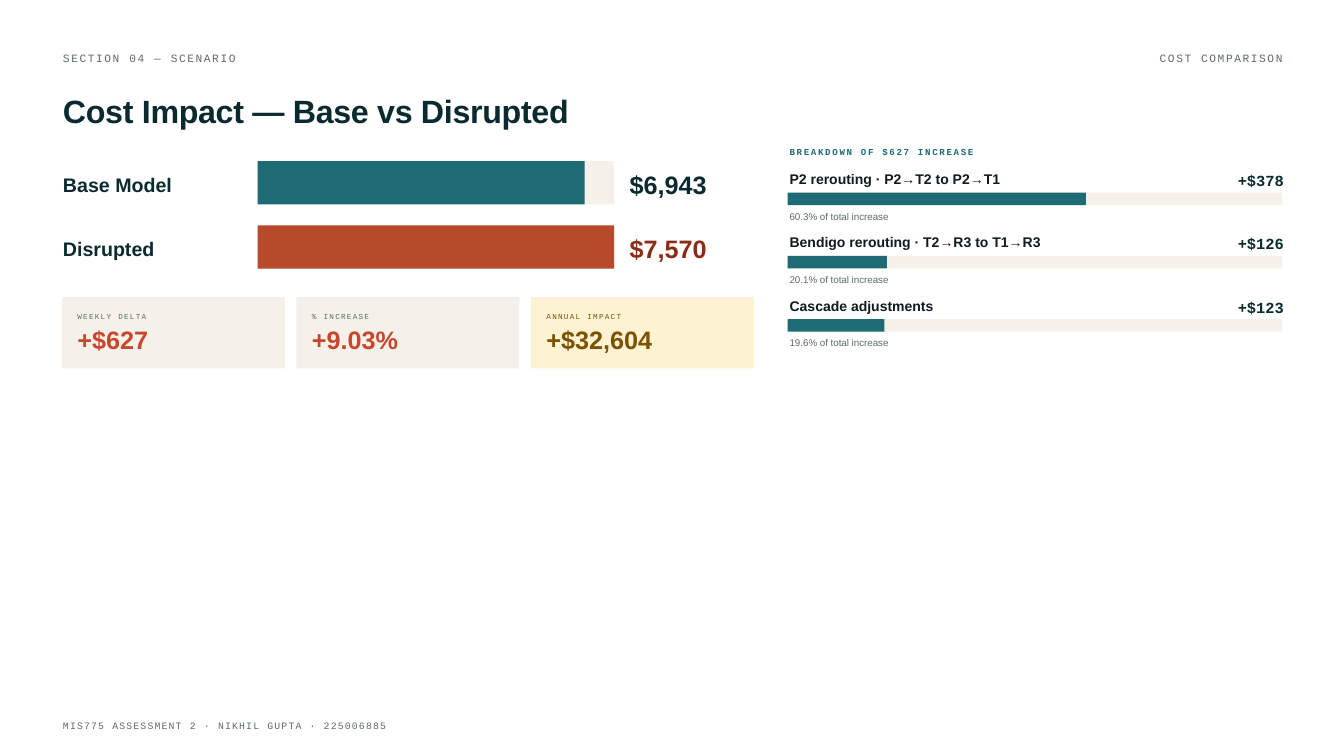
from pptx import Presentation
from pptx.dml.color import RGBColor
from pptx.enum import shapes, text
from pptx.util import Pt

INK = RGBColor(0x0B, 0x2A, 0x30)
BODY = RGBColor(0x0E, 0x1B, 0x1F)
GREY = RGBColor(0x5B, 0x6B, 0x6F)
TEAL = RGBColor(0x1F, 0x6B, 0x75)
RUST = RGBColor(0xB8, 0x4A, 0x2C)
DARK_RUST = RGBColor(0x8E, 0x2B, 0x16)
RED = RGBColor(0xC8, 0x46, 0x2C)
BROWN = RGBColor(0x7A, 0x52, 0x00)
SAND = RGBColor(0xF5, 0xF1, 0xEA)
CREAM = RGBColor(0xFD, 0xF3, 0xD3)
WHITE = RGBColor(0xFF, 0xFF, 0xFF)
SANS, MONO = "Arial", "Courier New"
MARGIN = 67.5


def add_text(slide, content, left, top, width, *, size, leading, color,
             font=SANS, bold=False, tracking=0):
    """Place one line of text; leading and tracking are in points."""
    box = slide.shapes.add_textbox(Pt(left), Pt(top), Pt(width), Pt(leading + 2))
    frame = box.text_frame
    frame.margin_left = frame.margin_right = frame.margin_top = frame.margin_bottom = 0
    frame.word_wrap = True
    frame.auto_size = text.MSO_AUTO_SIZE.NONE
    paragraph = frame.paragraphs[0]
    paragraph.line_spacing = Pt(leading)
    run = paragraph.add_run()
    run.text = content
    run.font.name = font
    run.font.size = Pt(size)
    run.font.bold = bold
    run.font.color.rgb = color
    if tracking:
        run.font._element.set("spc", str(round(tracking * 100)))


def add_block(slide, left, top, width, height, color, radius=0):
    kind = shapes.MSO_SHAPE.ROUNDED_RECTANGLE if radius else shapes.MSO_SHAPE.RECTANGLE
    block = slide.shapes.add_shape(kind, Pt(left), Pt(top), Pt(width), Pt(height))
    if radius:
        block.adjustments[0] = radius / min(width, height)
    block.shadow.inherit = False
    block.fill.solid()
    block.fill.fore_color.rgb = color
    block.line.fill.background()


def add_bar(slide, left, top, width, height, share, color, radius=0):
    """Draw a full-width track with its filled share on top."""
    add_block(slide, left, top, width, height, SAND, radius)
    add_block(slide, left, top, width * share, height, color)


def add_page_frame(slide):
    header = dict(size=12, leading=20.2, color=GREY, font=MONO, tracking=1.7)
    add_text(slide, "SECTION 04 — SCENARIO", MARGIN, 49.5, 202, **header)
    add_text(slide, "COST COMPARISON", 1242.5, 49.5, 140, **header)
    add_text(slide, "Cost Impact — Base vs Disrupted", MARGIN, 94.5, 1343,
             size=34.5, leading=44.7, color=INK, bold=True, tracking=-0.3)
    add_text(slide, "MIS775 ASSESSMENT 2 · NIKHIL GUPTA · 225006885", MARGIN, 766, 354,
             size=10.5, leading=17.6, color=GREY, font=MONO, tracking=1.3)


def add_cost_bars(slide, left, top):
    costs = [("Base Model", 6943, TEAL, INK), ("Disrupted", 7570, RUST, DARK_RUST)]
    largest = max(cost for _, cost, _, _ in costs)
    for index, (name, cost, fill, ink) in enumerate(costs):
        row = top + index * 68.8
        add_text(slide, name, left, row + 2.4, 197,
                 size=21, leading=35.3, color=INK, bold=True)
        add_bar(slide, left + 208.5, row, 382, 46.5, cost / largest, fill, radius=2.3)
        add_text(slide, f"${cost:,}", left + 607.2, row - 4.7, 137,
                 size=27, leading=45.4, color=ink, bold=True)


def add_impact_cards(slide, left, top, width, height):
    cards = [
        ("WEEKLY DELTA", "+$627", SAND, GREY, RED),
        ("% INCREASE", "+9.03%", SAND, GREY, RED),
        ("ANNUAL IMPACT", "+$32,604", CREAM, BROWN, BROWN),
    ]
    gap = 12.3
    card_width = (width - gap * (len(cards) - 1)) / len(cards)
    for index, (label, value, fill, label_color, value_color) in enumerate(cards):
        card_left = left + index * (card_width + gap)
        add_block(slide, card_left, top, card_width, height, fill)
        add_text(slide, label, card_left + 16.6, top + 11.5, 212, size=8.25,
                 leading=13.9, color=label_color, font=MONO, tracking=1.3)
        add_text(slide, value, card_left + 16.6, top + 15.8, 212,
                 size=27, leading=45.4, color=value_color, bold=True)


def add_breakdown(slide, left, top, width):
    items = [
        ("P2 rerouting · P2→T2 to P2→T1", 378, 60.3),
        ("Bendigo rerouting · T2→R3 to T1→R3", 126, 20.1),
        ("Cascade adjustments", 123, 19.6),
    ]
    text_left = left + 2.2
    add_text(slide, "BREAKDOWN OF $627 INCREASE", text_left, top, 542, size=9.75,
             leading=16.4, color=TEAL, font=MONO, bold=True, tracking=1.8)
    for index, (name, amount, percent) in enumerate(items):
        row = top + 23.8 + index * 67.7
        add_text(slide, name, text_left, row, 400,
                 size=15, leading=25.2, color=BODY, bold=True)
        add_text(slide, f"+${amount}", left + width - 47.6, row, 52,
                 size=16.5, leading=27.7, color=INK, font=MONO, bold=True)
        add_bar(slide, left, row + 30.8, width, 13.4, percent / 100, TEAL)
        add_text(slide, f"{percent}% of total increase", text_left, row + 44.6, 542,
                 size=10.5, leading=17.6, color=GREY)


def main():
    presentation = Presentation()
    presentation.slide_width, presentation.slide_height = Pt(1440), Pt(810)
    slide = presentation.slides.add_slide(presentation.slide_layouts[6])
    slide.background.fill.solid()
    slide.background.fill.fore_color.rgb = WHITE
    add_page_frame(slide)
    add_cost_bars(slide, MARGIN, 172.6)
    add_impact_cards(slide, 66.3, 318.3, 741.6, 76.3)
    add_breakdown(slide, 843.8, 151.9, 530)
    presentation.save("out.pptx")


if __name__ == "__main__":
    main()
